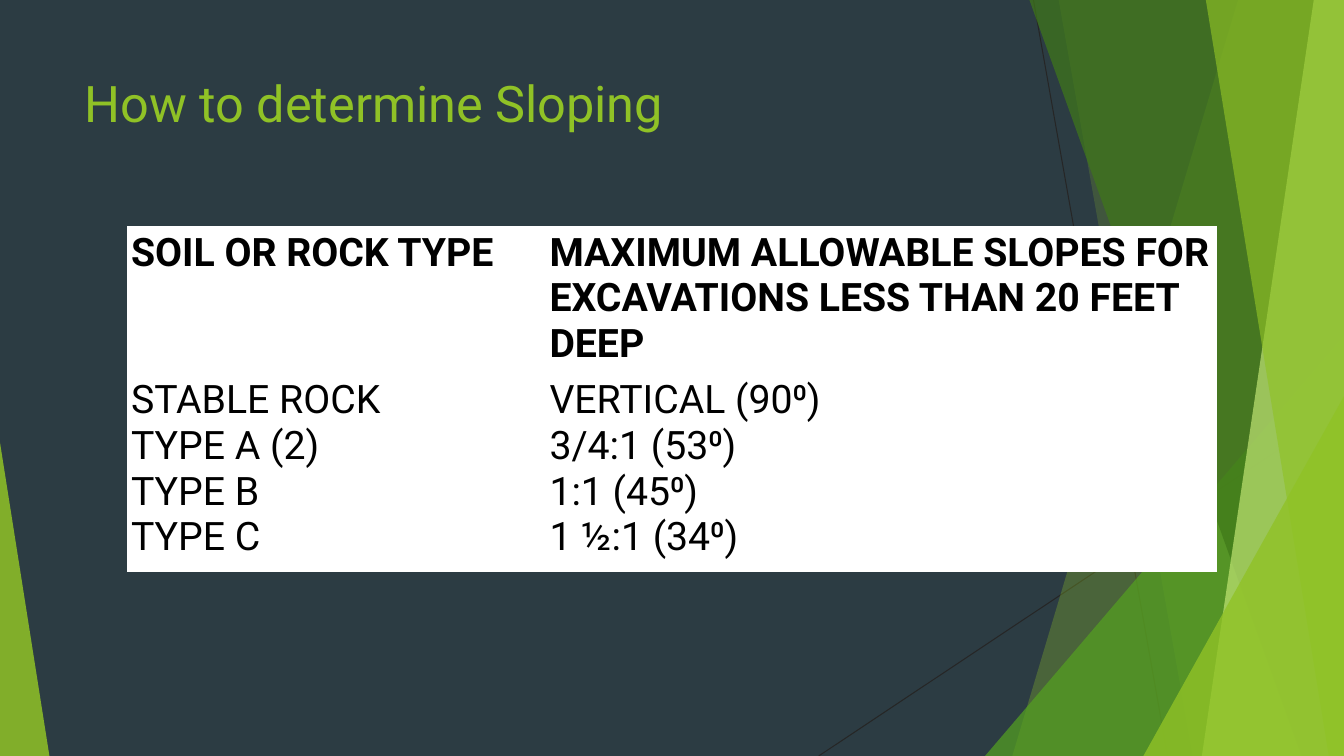
from pptx import Presentation
from pptx.dml.color import RGBColor
from pptx.enum.shapes import MSO_CONNECTOR, MSO_SHAPE
from pptx.oxml.ns import qn
from pptx.util import Inches, Pt
from lxml.etree import SubElement

WIDE, HIGH = 13.33, 7.5
COLORS = {
    "back": "2C3C43", "line": "262626", "lime": "90C226", "leaf": "54A021",
    "moss": "3F7819", "pale": "C0E474", "white": "FFFFFF", "black": "000000",
}


class Deck:
    font = "Roboto"

    def __init__(self):
        self.prs = Presentation()
        self.prs.slide_width, self.prs.slide_height = Inches(WIDE), Inches(HIGH)
        self.slide = self.prs.slides.add_slide(self.prs.slide_layouts[6])
        self.shapes = self.slide.shapes
        self.paint(self.slide.background.fill, "back")

    def color(self, name):
        return RGBColor.from_string(COLORS[name])

    def paint(self, fill, name):
        fill.solid()
        fill.fore_color.rgb = self.color(name)

    def glaze(self, shape, name, alpha):
        """Fill a shape with a colour at alpha percent opacity, without outline."""
        shape.shadow.inherit = False
        shape.line.fill.background()
        self.paint(shape.fill, name)
        solid = shape._element.spPr.find(qn("a:solidFill"))
        SubElement(solid[0], qn("a:alpha")).set("val", str(alpha * 1000))

    def line(self, *ends):
        rule = self.shapes.add_connector(
            MSO_CONNECTOR.STRAIGHT, *[Inches(n) for n in ends])
        rule.line.color.rgb = self.color("line")
        rule.line.width = Pt(0.75)
        SubElement(rule._element.spPr, qn("a:effectLst"))

    def band(self, top, base, name, alpha):
        """Full-height strip from a slanted left edge to the right slide edge."""
        pen = self.shapes.build_freeform(Inches(top), 0)
        pen.add_line_segments([
            (Inches(x), Inches(y))
            for x, y in ((WIDE, 0), (WIDE, HIGH), (base, HIGH))])
        self.glaze(pen.convert_to_shape(), name, alpha)

    def wedge(self, left, top, width, apex, name, alpha):
        """Triangle that stands on the bottom edge of the slide."""
        shape = self.shapes.add_shape(
            MSO_SHAPE.ISOSCELES_TRIANGLE, Inches(left), Inches(top),
            Inches(width), Inches(HIGH - top))
        shape.adjustments[0] = apex
        self.glaze(shape, name, alpha)

    def label(self, para, text, size, name, bold=False):
        para.text = text
        for run in para.runs:
            font = run.font
            font.name, font.size, font.bold = self.font, Pt(size), bold
            font.color.rgb = self.color(name)

    def title(self, text, *box):
        frame = self.shapes.add_textbox(*[Inches(n) for n in box]).text_frame
        frame.word_wrap = True
        self.label(frame.paragraphs[0], text, 36, "lime")

    def table(self, left, top, widths, heights, rows):
        grid = self.shapes.add_table(
            len(rows), len(widths), Inches(left), Inches(top),
            Inches(sum(widths)), Inches(sum(heights))).table
        for col, width in zip(grid.columns, widths):
            col.width = Inches(width)
        for r, (height, texts) in enumerate(zip(heights, rows)):
            grid.rows[r].height = Inches(height)
            for c, text in enumerate(texts):
                cell = grid.cell(r, c)
                self.paint(cell.fill, "white")
                cell.margin_left = cell.margin_right = Inches(0.03)
                cell.margin_top = cell.margin_bottom = Inches(0.03)
                self.label(cell.text_frame.paragraphs[0], text, 28, "black", r == 0)


def main():
    deck = Deck()
    deck.line(10.25, 0, 11.58, HIGH)
    deck.line(WIDE, 4.03, 8.12, HIGH)
    deck.band(12.28, 10.04, "lime", 30)
    deck.band(10.5, 11.83, "lime", 20)
    deck.wedge(9.77, 3.33, 3.56, 1, "leaf", 72)
    deck.band(10.21, 12.91, "moss", 70)
    deck.band(13.03, 11.92, "pale", 70)
    deck.band(11.96, 13.18, "lime", 65)
    deck.wedge(11.34, 3.93, 1.99, 1, "lime", 80)
    deck.wedge(0, 4.39, 0.49, 0, "lime", 85)

    deck.title("How to determine Sloping", 0.74, 0.67, 9.4, 1.44)
    slopes = [
        ("STABLE ROCK", "VERTICAL (90⁰)"),
        ("TYPE A (2)", "3/4:1 (53⁰)"),
        ("TYPE B", "1:1 (45⁰)"),
        ("TYPE C", "1 ½:1 (34⁰)"),
    ]
    heads = ("SOIL OR ROCK TYPE",
             "MAXIMUM ALLOWABLE SLOPES FOR EXCAVATIONS LESS THAN 20 FEET DEEP")
    lists = ["\v".join(col) for col in zip(*slopes)]
    deck.table(1.27, 2.25, (4.15, 6.64), (1.43, 1.96), (heads, lists))
    deck.prs.save("out.pptx")


if __name__ == "__main__":
    main()
